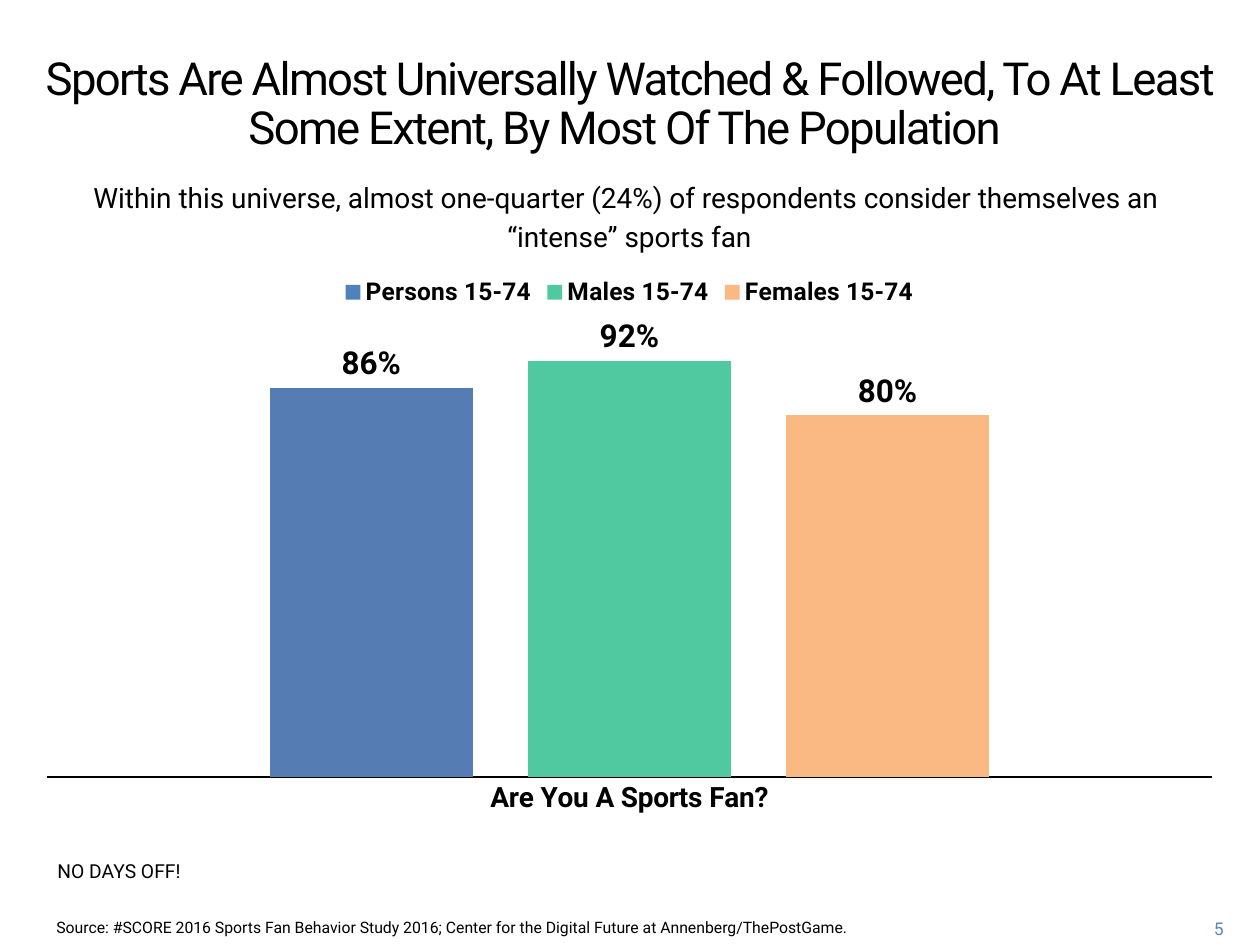
from dataclasses import dataclass

from lxml import etree
from pptx import Presentation
from pptx.chart.data import CategoryChartData
from pptx.dml.color import RGBColor
from pptx.enum.chart import XL_CHART_TYPE as ChartType
from pptx.enum.chart import XL_LABEL_POSITION as LabelPosition
from pptx.enum.chart import XL_LEGEND_POSITION as LegendPosition
from pptx.enum.chart import XL_TICK_MARK as TickMark
from pptx.enum.text import PP_ALIGN as Align
from pptx.oxml.ns import qn
from pptx.util import Pt

PX = 914400 // 126  # EMU in one pixel


@dataclass(frozen=True)
class Theme:
    font: str = "Roboto"
    black: str = "000000"
    page_blue: str = "508ABA"
    persons_key: str = "4F81BD"
    persons_bar: str = "567CB4"
    males: str = "50C8A0"
    females: str = "FAB982"
    title: int = 26
    title_leading: int = 28
    body: int = 16
    value: int = 18
    legend: int = 14
    note: int = 11
    page: int = 10
    source: int = 9


THEME = Theme()


def color(code):
    return RGBColor.from_string(code)


def set_font(font, size, code=THEME.black, bold=False):
    font.name = THEME.font
    font.size = Pt(size)
    font.bold = bold
    font.color.rgb = color(code)


def add_text(slide, box, lines, size, code=THEME.black, align=Align.LEFT,
             leading=None, tracking=None):
    """Add a top-anchored text box with one paragraph for each line."""
    frame = slide.shapes.add_textbox(*(value * PX for value in box)).text_frame
    frame.word_wrap = True
    for index, line in enumerate(lines):
        paragraph = frame.add_paragraph() if index else frame.paragraphs[0]
        paragraph.alignment = align
        if index:
            paragraph.space_before = Pt(size * 0.2)
        if leading:
            paragraph.line_spacing = Pt(leading)
        run = paragraph.add_run()
        run.text = line
        set_font(run.font, size, code)
        if tracking:
            run.font._element.set("spc", str(tracking * 100))


def set_plot_layout(chart, x, y, w, h):
    """Fix the inner plot area, as fractions of the chart."""
    plot_area = chart._chartSpace.chart.plotArea
    for old in plot_area.findall(qn("c:layout")):
        plot_area.remove(old)
    layout = etree.Element(qn("c:layout"))
    manual = etree.SubElement(layout, qn("c:manualLayout"))
    settings = dict(layoutTarget="inner", xMode="edge", yMode="edge", x=x, y=y, w=w, h=h)
    for name, value in settings.items():
        etree.SubElement(manual, qn(f"c:{name}")).set("val", str(value))
    plot_area.insert(0, layout)


def style_series(series, code):
    series.format.fill.solid()
    series.format.fill.fore_color.rgb = color(code)
    labels = series.data_labels
    labels.show_value = True
    labels.number_format = "0%"
    labels.number_format_is_linked = False
    labels.position = LabelPosition.OUTSIDE_END
    set_font(labels.font, THEME.value, bold=True)


def add_fan_chart(slide, box):
    data = CategoryChartData(number_format="0%")
    data.categories = ["Are You A Sports Fan?"]
    groups = [
        ("Persons 15-74", 0.86, THEME.persons_key),
        ("Males 15-74", 0.92, THEME.males),
        ("Females 15-74", 0.80, THEME.females),
    ]
    for name, share, _ in groups:
        data.add_series(name, [share])
    chart = slide.shapes.add_chart(
        ChartType.COLUMN_CLUSTERED, *(value * PX for value in box), data).chart
    chart.has_title = False
    set_font(chart.font, THEME.page)
    set_plot_layout(chart, 0.02, 0.11, 0.96, 0.81)

    # Bars and their values
    plot = chart.plots[0]
    plot.vary_by_categories = False
    plot.gap_width = 219
    plot.overlap = -27
    for series, (_, _, code) in zip(plot.series, groups):
        style_series(series, code)
    persons_fill = plot.series[0].points[0].format.fill
    persons_fill.solid()
    persons_fill.fore_color.rgb = color(THEME.persons_bar)

    # Axes
    category_axis = chart.category_axis
    category_axis.major_tick_mark = TickMark.NONE
    category_axis.format.line.color.rgb = color(THEME.black)
    category_axis.format.line.width = Pt(0.75)
    set_font(category_axis.tick_labels.font, THEME.body, bold=True)
    value_axis = chart.value_axis
    value_axis.minimum_scale = 0
    value_axis.maximum_scale = 1
    value_axis.has_major_gridlines = False
    value_axis.visible = False

    # Legend
    chart.has_legend = True
    chart.legend.position = LegendPosition.TOP
    chart.legend.include_in_layout = False
    set_font(chart.legend.font, THEME.legend, bold=True)


def main():
    presentation = Presentation()
    presentation.slide_width = 1260 * PX
    presentation.slide_height = 945 * PX
    slide = presentation.slides.add_slide(presentation.slide_layouts[6])

    # Heading
    add_text(slide, (23, 49, 1213, 71),
             ["Sports Are Almost Universally Watched & Followed, To At Least "
              "Some Extent, By Most Of The Population "],
             THEME.title, align=Align.CENTER,
             leading=THEME.title_leading, tracking=-1)
    add_text(slide, (23, 174, 1213, 50),
             ["Within this universe, almost one-quarter (24%) of respondents "
              "consider themselves an ", "“intense” sports fan"],
             THEME.body, align=Align.CENTER)

    add_fan_chart(slide, (23, 263, 1213, 559))

    # Footer
    add_text(slide, (45, 853, 237, 59), ["NO DAYS OFF!"], THEME.note)
    add_text(slide, (44, 912, 987, 29),
             ["Source: #SCORE 2016 Sports Fan Behavior Study 2016; Center for "
              "the Digital Future at Annenberg/ThePostGame."], THEME.source)
    add_text(slide, (1159, 912, 77, 31), ["5"], THEME.page,
             THEME.page_blue, Align.RIGHT)

    presentation.save("out.pptx")


if __name__ == "__main__":
    main()
